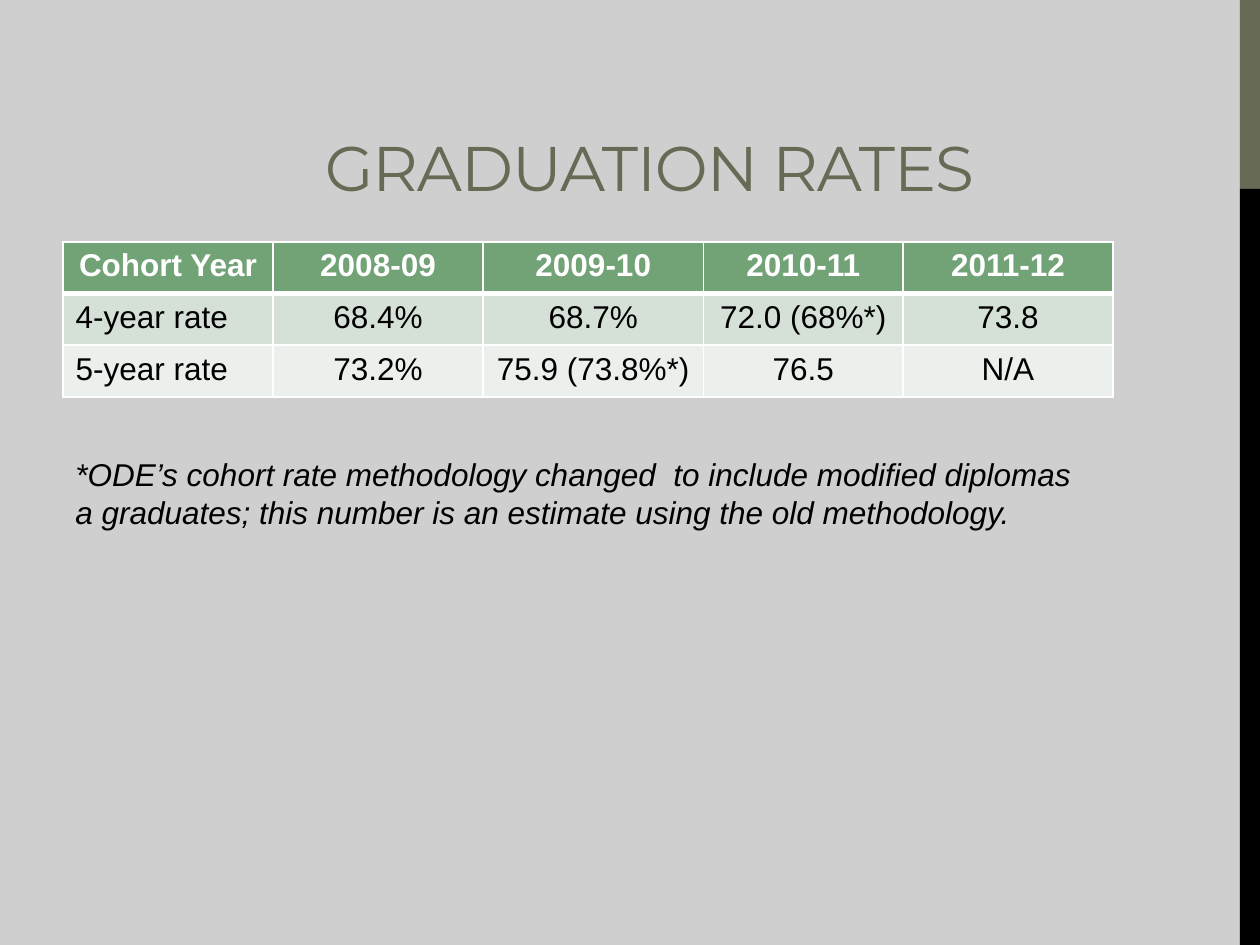
from dataclasses import dataclass

from lxml import etree
from pptx import Presentation
from pptx.dml.color import RGBColor
from pptx.enum.shapes import MSO_SHAPE
from pptx.enum.text import MSO_ANCHOR, PP_ALIGN
from pptx.oxml.ns import qn
from pptx.util import Inches, Pt

RECTANGLE = MSO_SHAPE.RECTANGLE
BOTTOM = MSO_ANCHOR.BOTTOM
LEFT, CENTER, RIGHT = PP_ALIGN.LEFT, PP_ALIGN.CENTER, PP_ALIGN.RIGHT

WIDTH, HEIGHT = 10, 7.5
MARGIN = WIDTH / 20
BAR_WIDTH = 0.16
BAR_SPLIT = HEIGHT / 5
COLUMN_UNIT = 1 / 12
COLUMN_SPANS = (20, 20, 21, 19, 20)
ROW_HEIGHT = 0.41
TABLE_TOP = 1.92
THIN, THICK = 1, 3

OLIVE, BLACK, WHITE, GRAY = "676A55", "000000", "FFFFFF", "CFCFCF"


@dataclass
class RateRow:
    cells: tuple[str, ...]
    fill: str
    color: str = BLACK
    top: int = THIN
    bottom: int = THIN
    header: bool = False


RATE_ROWS = (
    RateRow(("Cohort Year", "2008-09", "2009-10", "2010-11", "2011-12"),
            "72A376", WHITE, bottom=THICK, header=True),
    RateRow(("4-year rate", "68.4%", "68.7%", "72.0 (68%*)", "73.8"), "D5E0D6", top=THICK),
    RateRow(("5-year rate", "73.2%", "75.9 (73.8%*)", "76.5", "N/A"), "EBF0EC"),
)
NOTE = ("*ODE’s cohort rate methodology changed  to include modified diplomas "
        "a graduates; this number is an estimate using the old methodology.")


def paint(fill, color: str) -> None:
    fill.solid()
    fill.fore_color.rgb = RGBColor.from_string(color)


def add_run(para, text: str, size: float, color: str, font: str = "Arial",
            bold: bool = False, italic: bool = False):
    span = para.add_run()
    span.text = text
    span.font.name = font
    span.font.size = Pt(size)
    span.font.bold = bold
    span.font.italic = italic
    span.font.color.rgb = RGBColor.from_string(color)
    return span


def add_bar(slide, top: float, height: float, color: str) -> None:
    bar = slide.shapes.add_shape(RECTANGLE, Inches(WIDTH - BAR_WIDTH), Inches(top),
                                 Inches(BAR_WIDTH), Inches(height))
    bar.shadow.inherit = False
    bar.line.fill.background()
    paint(bar.fill, color)


def set_title(slide, text: str) -> None:
    title = slide.shapes.title
    title.left, title.top = Inches(1.5), Inches(0.17)
    title.width, title.height = Inches(6.33), Inches(1.5)
    title.text_frame.vertical_anchor = BOTTOM
    para = title.text_frame.paragraphs[0]
    para.alignment = RIGHT
    span = add_run(para, text, 36, OLIVE, "Montserrat")
    span.font._element.set("spc", "-60")


def add_border(cell, side: str, points: int) -> None:
    line = etree.SubElement(cell._tc.get_or_add_tcPr(), qn(f"a:ln{side}"),
                            w=str(Pt(points)))
    solid = etree.SubElement(line, qn("a:solidFill"))
    etree.SubElement(solid, qn("a:srgbClr"), val=WHITE)


def fill_cell(cell, text: str, row: RateRow, alignment) -> None:
    for side, points in (("L", THIN), ("R", THIN), ("T", row.top), ("B", row.bottom)):
        add_border(cell, side, points)
    paint(cell.fill, row.fill)
    para = cell.text_frame.paragraphs[0]
    para.alignment = alignment
    add_run(para, text, 18, row.color, bold=row.header)


def add_rate_table(slide) -> None:
    frame = slide.shapes.add_table(
        len(RATE_ROWS), len(COLUMN_SPANS), Inches(MARGIN), Inches(TABLE_TOP),
        Inches(sum(COLUMN_SPANS) * COLUMN_UNIT), Inches(len(RATE_ROWS) * ROW_HEIGHT))
    table = frame.table
    for column, units in zip(table.columns, COLUMN_SPANS):
        column.width = Inches(units * COLUMN_UNIT)
    for row_index, row in enumerate(RATE_ROWS):
        table.rows[row_index].height = Inches(ROW_HEIGHT)
        for column_index, text in enumerate(row.cells):
            is_label = column_index == 0 and not row.header
            fill_cell(table.cell(row_index, column_index), text, row,
                      LEFT if is_label else CENTER)


def add_note(slide) -> None:
    box = slide.shapes.add_textbox(Inches(MARGIN), Inches(3.56), Inches(8.25), Inches(0.71))
    box.text_frame.word_wrap = True
    add_run(box.text_frame.paragraphs[0], NOTE, 18, BLACK, italic=True)


def main() -> None:
    deck = Presentation()
    deck.slide_width, deck.slide_height = Inches(WIDTH), Inches(HEIGHT)
    page = deck.slides.add_slide(deck.slide_layouts.get_by_name("Title Only"))
    paint(page.background.fill, GRAY)
    add_bar(page, 0, BAR_SPLIT, OLIVE)
    add_bar(page, BAR_SPLIT, HEIGHT - BAR_SPLIT, BLACK)
    set_title(page, "GRADUATION RATES")
    add_rate_table(page)
    add_note(page)
    deck.save("out.pptx")


if __name__ == "__main__":
    main()
